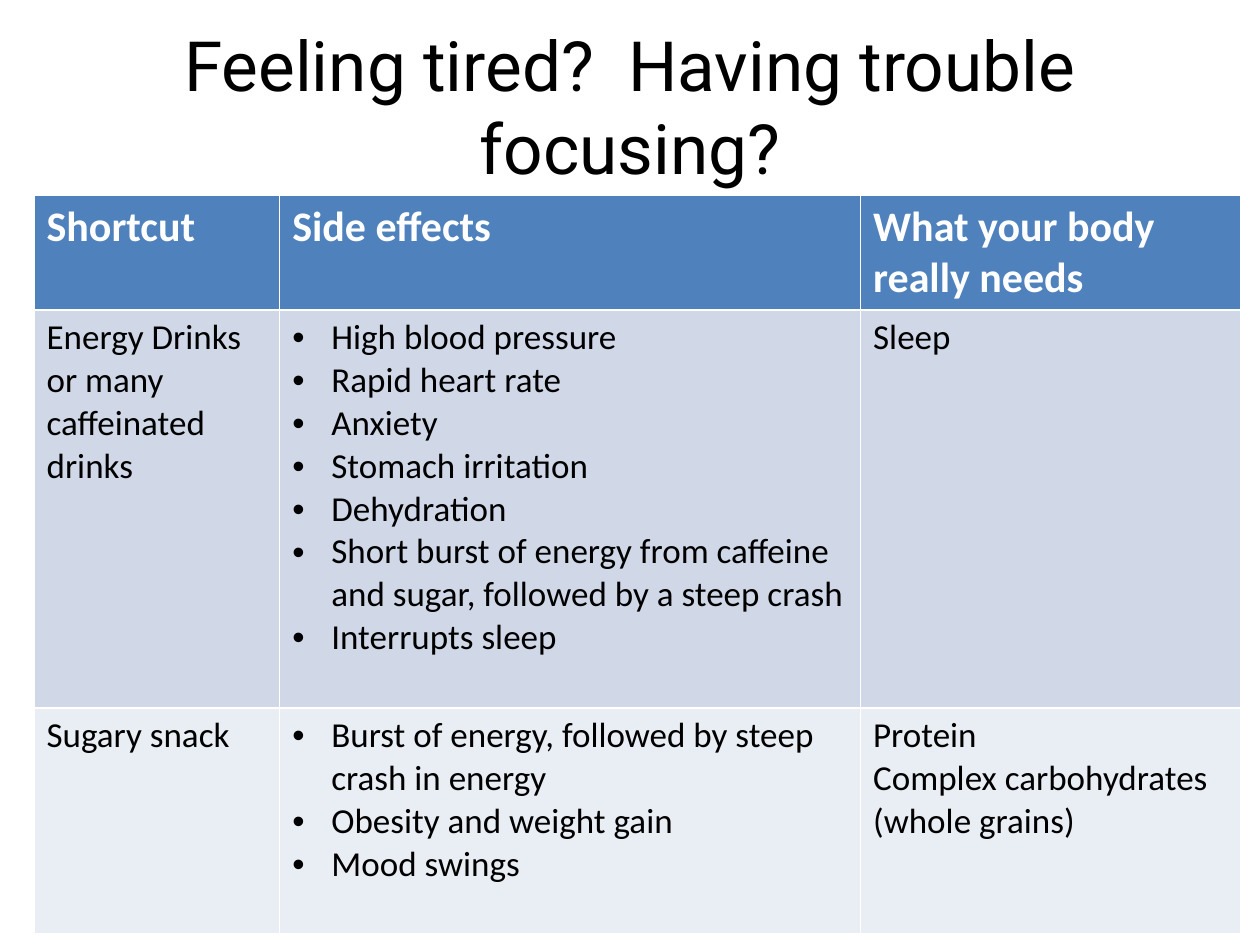
from lxml.etree import SubElement
from pptx import Presentation
from pptx.dml.color import RGBColor as RGB
from pptx.enum.text import MSO_ANCHOR as Anchor, PP_ALIGN as Align
from pptx.oxml.ns import qn
from pptx.util import Inches, Pt

TITLE = "Feeling tired?  Having trouble focusing?"
HEADINGS = ["Shortcut", "Side effects", "What your body really needs"]
ROWS = [
    [
        ["Energy Drinks or many caffeinated drinks"],
        [
            "High blood pressure",
            "Rapid heart rate",
            "Anxiety",
            "Stomach irritation",
            "Dehydration",
            "Short burst of energy from caffeine and sugar, followed by a steep crash",
            "Interrupts sleep",
        ],
        ["Sleep"],
    ],
    [
        ["Sugary snack"],
        [
            "Burst of energy, followed by steep crash in energy",
            "Obesity and weight gain",
            "Mood swings",
        ],
        ["Protein", "Complex carbohydrates (whole grains)"],
    ],
]
COLORS = {
    "text": "000000",
    "heading": "FFFFFF",
    "header": "4F81BD",
    "bands": ["D0D8E8", "E9EDF4"],
}
WIDTH, HEIGHT = 10, 7.5
COLUMN_WIDTHS = [1.95, 4.61, 3.02]
ROW_HEIGHTS = [0.91, 3.16, 1.79]
TABLE_LEFT, TABLE_TOP = 0.27, 1.55
BULLET_INDENT = Inches(0.31)


def write(frame, lines, font="Calibri", size=20, color="text", bold=False,
          align=Align.LEFT, bullet=False):
    for index, line in enumerate(lines):
        paragraph = frame.paragraphs[0] if index == 0 else frame.add_paragraph()
        paragraph.alignment = align
        run = paragraph.add_run()
        run.text = line
        run.font.name = font
        run.font.size = Pt(size)
        run.font.bold = bold
        run.font.color.rgb = RGB.from_string(COLORS[color])
        if bullet:
            properties = paragraph._p.get_or_add_pPr()
            properties.set("marL", str(BULLET_INDENT))
            properties.set("indent", str(-BULLET_INDENT))
            SubElement(properties, qn("a:buFont"), typeface="Arial")
            SubElement(properties, qn("a:buChar"), char="•")


def add_title(slide):
    box = slide.shapes.add_textbox(
        Inches(WIDTH * 0.05), Inches(0.21), Inches(WIDTH * 0.9), Inches(1.25)
    )
    frame = box.text_frame
    frame.word_wrap = True
    frame.vertical_anchor = Anchor.MIDDLE
    write(frame, [TITLE], font="Roboto", size=39.6, align=Align.CENTER)


def add_effects_table(slide):
    contents = [[[heading] for heading in HEADINGS]] + ROWS
    fills = [COLORS["header"]] + COLORS["bands"]
    table = slide.shapes.add_table(
        len(contents), len(HEADINGS), Inches(TABLE_LEFT), Inches(TABLE_TOP),
        Inches(sum(COLUMN_WIDTHS)), Inches(sum(ROW_HEIGHTS)),
    ).table
    for column, width in zip(table.columns, COLUMN_WIDTHS):
        column.width = Inches(width)
    for row, height in zip(table.rows, ROW_HEIGHTS):
        row.height = Inches(height)
    for row_index, (row, fill) in enumerate(zip(contents, fills)):
        is_header = row_index == 0
        style = {"size": 24, "color": "heading", "bold": True} if is_header else {}
        for column_index, lines in enumerate(row):
            cell = table.cell(row_index, column_index)
            cell.fill.solid()
            cell.fill.fore_color.rgb = RGB.from_string(fill)
            is_list = column_index == 1 and not is_header
            write(cell.text_frame, lines, bullet=is_list, **style)


def main():
    presentation = Presentation()
    presentation.slide_width = Inches(WIDTH)
    presentation.slide_height = Inches(HEIGHT)
    slide = presentation.slides.add_slide(presentation.slide_layouts[6])
    add_title(slide)
    add_effects_table(slide)
    presentation.save("out.pptx")


if __name__ == "__main__":
    main()
